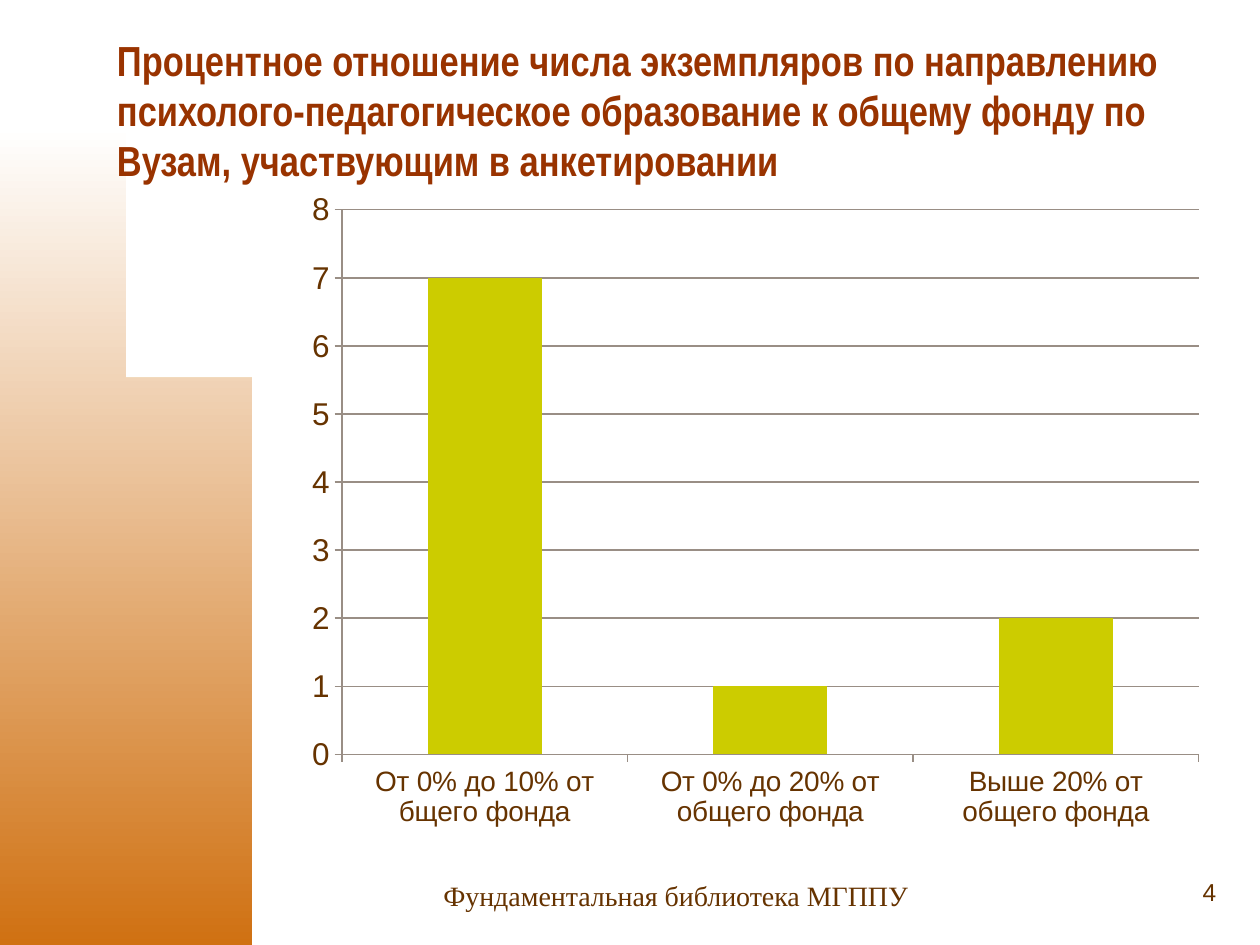
"""Build a slide with a column chart on the share of specialised library copies."""
from math import cos, pi, sin

from pptx import Presentation
from pptx.chart.data import CategoryChartData
from pptx.dml.color import RGBColor
from pptx.enum.chart import XL_CHART_TYPE, XL_TICK_MARK
from pptx.enum.text import MSO_ANCHOR, PP_ALIGN
from pptx.util import Inches, Pt

THEME = {
    "colors": {"title": "993300", "text": "663300", "bar": "CCCC00",
               "line": "998E85", "curve_top": "FFFFFF", "curve_bottom": "CC6600"},
    "sizes": {"title": 24, "values": 18, "categories": 16, "footer": 16, "number": 14},
}
SLIDE_SIZE = (10, 7.5)
CURVE_RADII = (2.17, 6.67)
CURVE_STEPS = 90

TEXTS = [
    {"text": "Процентное отношение числа экземпляров по направлению "
             "психолого-педагогическое образование к общему фонду по "
             "Вузам, участвующим в анкетировании",
     "at": (0.83, 0.33, 8.75, 1.08), "size": "title", "color": "title",
     "font": "Arial Narrow", "bold": True, "anchor": MSO_ANCHOR.MIDDLE,
     "align": PP_ALIGN.LEFT},
    {"text": "4", "at": (7.67, 6.83, 2.08, 0.5), "size": "number", "color": "text",
     "font": "Arial", "bold": False, "anchor": MSO_ANCHOR.MIDDLE,
     "align": PP_ALIGN.RIGHT},
    {"text": "Фундаментальная библиотека МГППУ",
     "at": (3.42, 6.92, 4.25, 0.33), "size": "footer", "color": "text",
     "font": "Times New Roman", "bold": False, "anchor": MSO_ANCHOR.TOP,
     "align": PP_ALIGN.LEFT},
]
CHART = {
    "at": (2.33, 1.42, 7.33, 5.25),
    "categories": ["От 0% до 10% от бщего фонда", "От 0% до 20% от общего фонда",
                   "Выше 20% от общего фонда"],
    "series": ("Series 1", (7, 1, 2)),
}


def color(name):
    """Return a theme colour."""
    return RGBColor.from_string(THEME["colors"][name])


def apply(target, values):
    """Set each attribute named in a dict."""
    for name, value in values.items():
        setattr(target, name, value)


def style_font(font, face, size, tint, bold=False):
    """Apply theme type to a font."""
    apply(font, {"name": face, "size": Pt(THEME["sizes"][size]), "bold": bold})
    font.color.rgb = color(tint)


def style_line(line):
    """Apply the chart's thin line."""
    line.width = Pt(0.75)
    line.color.rgb = color("line")


def add_curve(page):
    """Draw the gradient quarter ellipse in the lower left corner."""
    width, height = CURVE_RADII
    bottom = SLIDE_SIZE[1]
    angles = [pi / 2 * step / CURVE_STEPS for step in range(CURVE_STEPS + 1)]
    points = [(width * sin(angle), bottom - height * cos(angle)) for angle in angles]
    builder = page.shapes.build_freeform(*points[0], scale=Inches(1))
    builder.add_line_segments(points[1:] + [(0, bottom)], close=True)
    curve = builder.convert_to_shape()
    curve.shadow.inherit = False
    curve.line.fill.background()
    curve.fill.gradient()
    curve.fill.gradient_angle = 270
    for stop, position, name in zip(curve.fill.gradient_stops, (0, 1),
                                    ("curve_top", "curve_bottom")):
        stop.position = position
        stop.color.rgb = color(name)


def add_text(page, item):
    """Add one styled text box."""
    box = page.shapes.add_textbox(*map(Inches, item["at"]))
    apply(box.text_frame, {"word_wrap": True, "vertical_anchor": item["anchor"]})
    para = box.text_frame.paragraphs[0]
    para.alignment = item["align"]
    span = para.add_run()
    span.text = item["text"]
    style_font(span.font, item["font"], item["size"], item["color"], item["bold"])


def add_columns(page):
    """Add the column chart."""
    data = CategoryChartData()
    data.categories = CHART["categories"]
    data.add_series(*CHART["series"])
    chart = page.shapes.add_chart(XL_CHART_TYPE.COLUMN_CLUSTERED,
                                  *map(Inches, CHART["at"]), data).chart
    apply(chart, {"has_legend": False, "has_title": False})
    style_font(chart.font, "Arial", "values", "text")
    plot = chart.plots[0]
    apply(plot, {"gap_width": 150, "vary_by_categories": False})
    fill = plot.series[0].format.fill
    fill.solid()
    fill.fore_color.rgb = color("bar")
    for axis, size in ((chart.category_axis, "categories"), (chart.value_axis, "values")):
        apply(axis, {"major_tick_mark": XL_TICK_MARK.OUTSIDE,
                     "minor_tick_mark": XL_TICK_MARK.NONE})
        style_font(axis.tick_labels.font, "Arial", size, "text")
        style_line(axis.format.line)
    apply(chart.value_axis, {"minimum_scale": 0, "maximum_scale": 8, "major_unit": 1,
                             "has_major_gridlines": True})
    style_line(chart.value_axis.major_gridlines.format.line)


def main():
    """Build and save the deck."""
    deck = Presentation()
    deck.slide_width, deck.slide_height = map(Inches, SLIDE_SIZE)
    page = deck.slides.add_slide(deck.slide_layouts[6])
    add_curve(page)
    add_columns(page)
    for item in TEXTS:
        add_text(page, item)
    deck.save("out.pptx")


if __name__ == "__main__":
    main()
